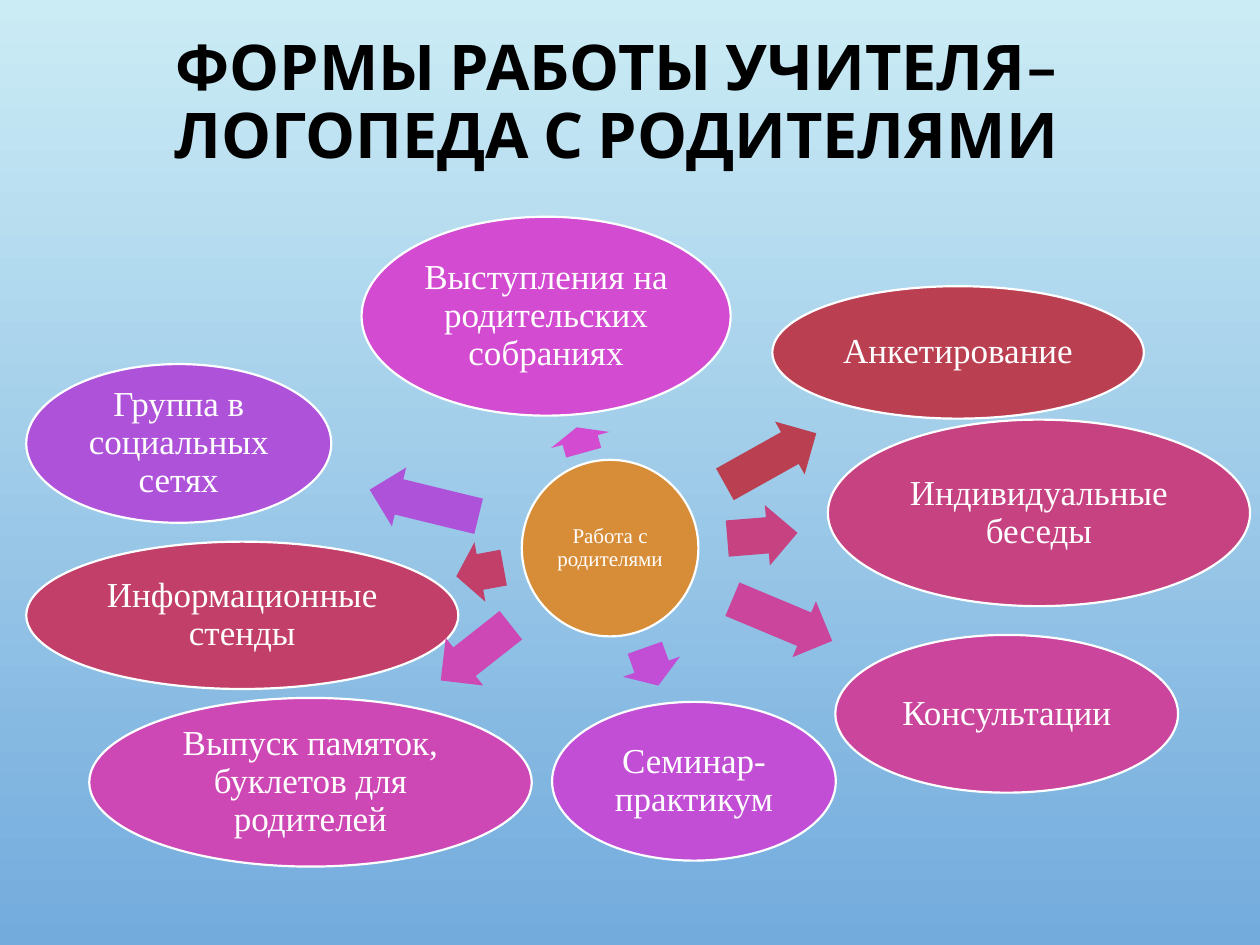
from dataclasses import dataclass

from pptx import Presentation
from pptx.dml.color import RGBColor
from pptx.enum import shapes, text
from pptx.util import Cm, Pt

SERIF = "Times New Roman"
WHITE = "FFFFFF"
THICK = 1.22  # arrow height, cm


@dataclass
class Oval:
    label: str
    left: float
    top: float
    width: float
    height: float
    fill: str
    size: int = 20
    inset: float = 0.08


@dataclass
class Arrow:
    left: float
    top: float
    width: float
    turn: float


HUB = Oval("Работа с родителями", 10.52, 9.27, 3.56, 3.56, "D78D38", 12, 0.05)

FORMS = [
    (Arrow(14.48, 8.64, 2.11, 330.8),
     Oval("Анкетирование", 15.57, 5.77, 7.49, 2.67, "BA3F51")),
    (Arrow(9.19, 10.92, 0.97, 169.6),
     Oval("Информационные стенды", 0.53, 10.92, 8.71, 2.97, "C13F68")),
    (Arrow(14.66, 10.19, 1.42, 355.3),
     Oval("Индивидуальные беседы", 16.69, 8.46, 8.51, 3.76, "C64281")),
    (Arrow(14.68, 11.89, 2.18, 22.7),
     Oval("Консультации", 16.84, 12.8, 6.91, 3.18, "CA459B")),
    (Arrow(8.69, 12.55, 1.8, 141.8),
     Oval("Выпуск памяток, буклетов для родителей", 1.8, 14.07, 8.92, 3.4, "CE48B5")),
    (Arrow(11.43, 8.26, 0.53, 254.5),
     Oval("Выступления на родительских собраниях", 7.29, 4.37, 7.44, 4.01, "D24BD0")),
    (Arrow(12.73, 12.83, 0.81, 70.4),
     Oval("Семинар-практикум", 11.13, 14.15, 5.72, 3.2, "C14ED5")),
    (Arrow(7.42, 9.53, 2.26, 193.7),
     Oval("Группа в социальных сетях", 0.53, 7.34, 6.15, 3.2, "AE52D9")),
]


def tint(target, shade: str) -> None:
    """Set a color format to a hex shade."""
    target.rgb = RGBColor.from_string(shade)


def write(shape, words: str, face: str, size: int, shade: str, bold: bool = False) -> None:
    frame = shape.text_frame
    frame.text = words
    frame.word_wrap = True
    frame.vertical_anchor = text.MSO_ANCHOR.MIDDLE
    para = frame.paragraphs[0]
    para.alignment = text.PP_ALIGN.CENTER
    para.line_spacing = 0.9
    font = para.runs[0].font
    font.name, font.size, font.bold = face, Pt(size), bold
    tint(font.color, shade)


def add_form(slide, kind, left: float, top: float, width: float, height: float, fill: str):
    """Add a filled preset shape without a shadow; lengths in cm."""
    shape = slide.shapes.add_shape(kind, Cm(left), Cm(top), Cm(width), Cm(height))
    shape.shadow.inherit = False
    shape.fill.solid()
    tint(shape.fill.fore_color, fill)
    return shape


def add_oval(slide, oval: Oval) -> None:
    shape = add_form(slide, shapes.MSO_SHAPE.OVAL, oval.left, oval.top,
                     oval.width, oval.height, oval.fill)
    tint(shape.line.color, WHITE)
    shape.line.width = Pt(1.25)
    frame = shape.text_frame
    frame.margin_left = frame.margin_right = Cm(oval.inset)
    frame.margin_top = frame.margin_bottom = Cm(oval.inset)
    write(shape, oval.label, SERIF, oval.size, WHITE)


def add_arrow(slide, arrow: Arrow, fill: str) -> None:
    shape = add_form(slide, shapes.MSO_SHAPE.RIGHT_ARROW, arrow.left, arrow.top,
                     arrow.width, THICK, fill)
    shape.line.fill.background()
    shape.adjustments[0] = 0.6
    shape.adjustments[1] = 0.5
    shape.rotation = arrow.turn


def add_back(slide) -> None:
    fill = slide.background.fill
    fill.gradient()
    fill.gradient_angle = 270
    for stop, shade in zip(fill.gradient_stops, ("CBECF5", "73ABDD")):
        tint(stop.color, shade)


def main() -> None:
    deck = Presentation()
    deck.slide_width, deck.slide_height = Cm(25.4), Cm(19.05)
    slide = deck.slides.add_slide(deck.slide_layouts[6])
    add_back(slide)
    title = slide.shapes.add_textbox(Cm(0.53), Cm(0.48), Cm(23.8), Cm(3.23))
    write(title, "ФОРМЫ РАБОТЫ УЧИТЕЛЯ–ЛОГОПЕДА С РОДИТЕЛЯМИ", "Cabin", 36, "000000", True)
    add_oval(slide, HUB)
    for arrow, oval in FORMS:
        add_arrow(slide, arrow, oval.fill)
        add_oval(slide, oval)
    deck.save("out.pptx")


if __name__ == "__main__":
    main()
